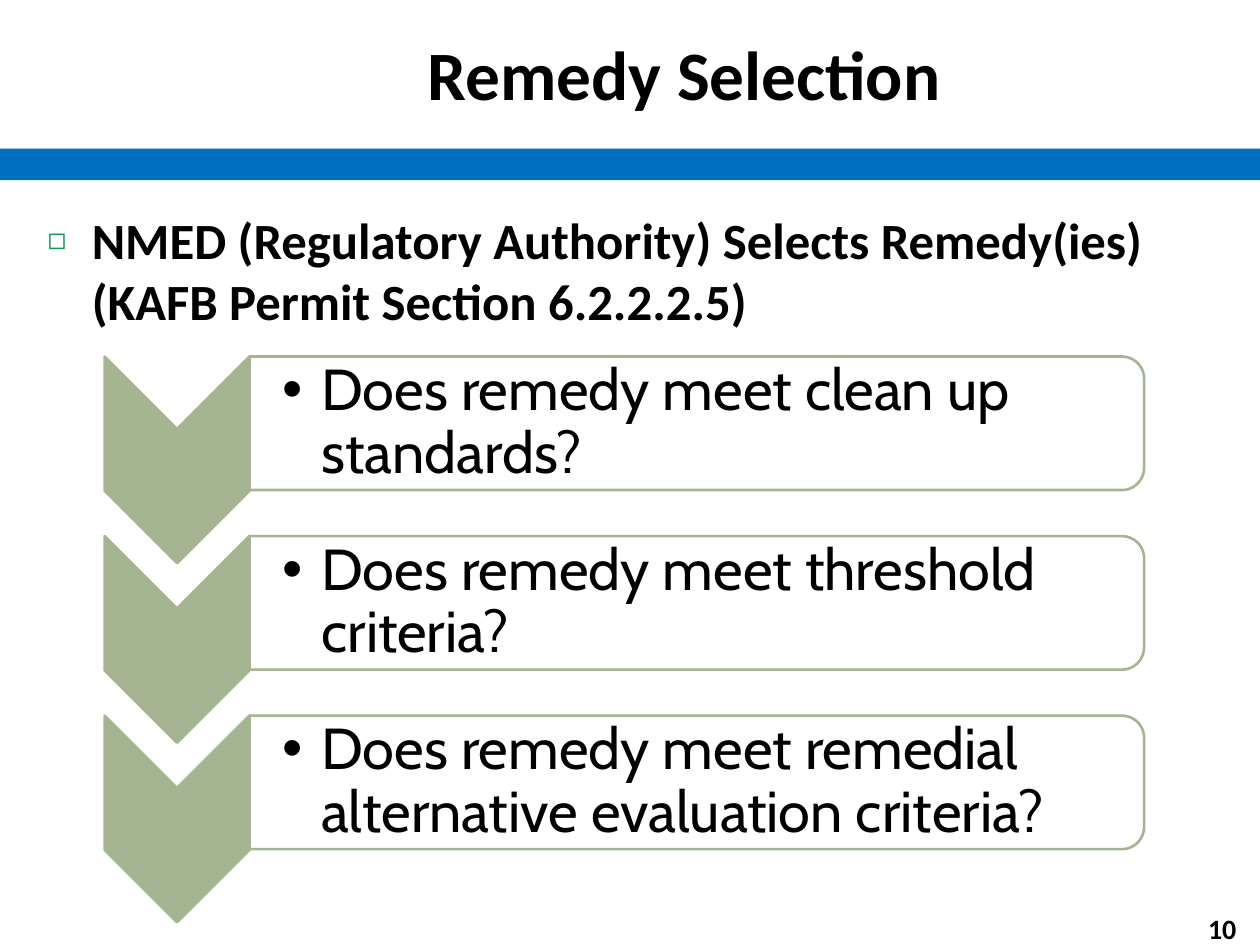
import pptx
import pptx.util
import pptx.dml.color
import pptx.enum.shapes
import pptx.enum.text
from lxml import etree
from pptx.oxml.ns import qn

Inches, Pt = pptx.util.Inches, pptx.util.Pt
SHAPE = pptx.enum.shapes.MSO_SHAPE
ANCHOR = pptx.enum.text.MSO_ANCHOR
ALIGN = pptx.enum.text.PP_ALIGN

TITLE = "Remedy Selection"
HEADING = "NMED (Regulatory Authority) Selects Remedy(ies) (KAFB Permit Section 6.2.2.2.5)"
QUESTIONS = [
    "Does remedy meet clean up standards?",
    "Does remedy meet threshold criteria?",
    "Does remedy meet remedial alternative evaluation criteria?",
]
PAGE = "10"
BLUE, SAGE, GREEN, WHITE, BLACK = "0070C0", "A5B592", "199755", "FFFFFF", "000000"

# Question rows
ROW_TOP, ROW_STEP = 2.83, 1.425
CHEVRON_LEFT, CHEVRON_W, CHEVRON_H = 0.83, 1.15, 1.64
PANEL_LEFT, PANEL_W, PANEL_H = 1.98, 7.1, 1.06
TEXT_W, TEXT_H = 7.05, 0.96


def rgb(color):
    return pptx.dml.color.RGBColor.from_string(color)


def add_bullet(p, char, indent, color=None, percent=None):
    pPr = p._p.get_or_add_pPr()
    pPr.set("marL", str(Inches(indent)))
    pPr.set("indent", str(-Inches(indent)))
    if color:
        clr = etree.SubElement(pPr, qn("a:buClr"))
        etree.SubElement(clr, qn("a:srgbClr"), val=color)
    if percent:
        etree.SubElement(pPr, qn("a:buSzPct"), val=str(percent * 1000))
    etree.SubElement(pPr, qn("a:buFont"), typeface="Arial")
    etree.SubElement(pPr, qn("a:buChar"), char=char)


def add_text(s, text, left, top, width, height, size, font="Calibri", bold=True,
             align=ALIGN.LEFT, anchor=ANCHOR.MIDDLE, insets=(0.1, 0.05, 0.1, 0.05),
             spacing=None, bullet=None):
    box = s.shapes.add_textbox(Inches(left), Inches(top), Inches(width), Inches(height))
    tf = box.text_frame
    tf.word_wrap = True
    tf.vertical_anchor = anchor
    tf.margin_left, tf.margin_top, tf.margin_right, tf.margin_bottom = map(Inches, insets)
    p = tf.paragraphs[0]
    p.alignment = align
    if spacing:
        p.line_spacing = spacing
    if bullet:
        add_bullet(p, **bullet)
    r = p.add_run()
    r.text = text
    r.font.name, r.font.size, r.font.bold = font, Pt(size), bold
    r.font.color.rgb = rgb(BLACK)


def add_box(s, kind, left, top, width, height, fill, line=None, alpha=None):
    sp = s.shapes.add_shape(kind, Inches(left), Inches(top), Inches(width), Inches(height))
    sp.shadow.inherit = False
    sp.fill.solid()
    sp.fill.fore_color.rgb = rgb(fill)
    if alpha:
        clr = sp._element.spPr.find(qn("a:solidFill")).find(qn("a:srgbClr"))
        etree.SubElement(clr, qn("a:alpha"), val=str(alpha * 1000))
    if line:
        sp.line.color.rgb = rgb(line)
        sp.line.width = Pt(1.5)
    else:
        sp.line.fill.background()
    return sp


def add_turned(s, kind, left, top, width, height, fill, **kwargs):
    """Add a shape turned 90 degrees that covers the given area once turned."""
    shift = (width - height) / 2
    sp = add_box(s, kind, left + shift, top - shift, height, width, fill, **kwargs)
    sp.rotation = 90


def add_question(s, text, top):
    add_turned(s, SHAPE.CHEVRON, CHEVRON_LEFT, top, CHEVRON_W, CHEVRON_H, SAGE, line=SAGE)
    add_turned(s, SHAPE.ROUND_2_SAME_RECTANGLE, PANEL_LEFT, top, PANEL_W, PANEL_H,
               WHITE, line=SAGE, alpha=90)
    add_text(s, text, PANEL_LEFT, top + (PANEL_H - TEXT_H) / 2, TEXT_W, TEXT_H, 33,
             font="Cabin", bold=False, insets=(0.26, 0.02, 0.02, 0.02), spacing=0.9,
             bullet=dict(char="•", indent=0.31))


def main():
    prs = pptx.Presentation()
    prs.slide_width, prs.slide_height = Inches(10), Inches(7.5)
    s = prs.slides.add_slide(prs.slide_layouts[6])

    add_box(s, SHAPE.RECTANGLE, 0, 1.18, 10, 0.25, BLUE)
    add_text(s, PAGE, 9.41, 7.23, 0.58, 0.27, 16, align=ALIGN.CENTER)
    add_text(s, HEADING, 0.28, 1.61, 9.58, 5.75, 29, anchor=ANCHOR.TOP,
             bullet=dict(char="◻", indent=0.35, color=GREEN, percent=60))
    add_text(s, TITLE, 1.1, 0.04, 8.66, 1.08, 39.6, align=ALIGN.CENTER)
    for i, question in enumerate(QUESTIONS):
        add_question(s, question, ROW_TOP + i * ROW_STEP)

    prs.save("out.pptx")


if __name__ == "__main__":
    main()
